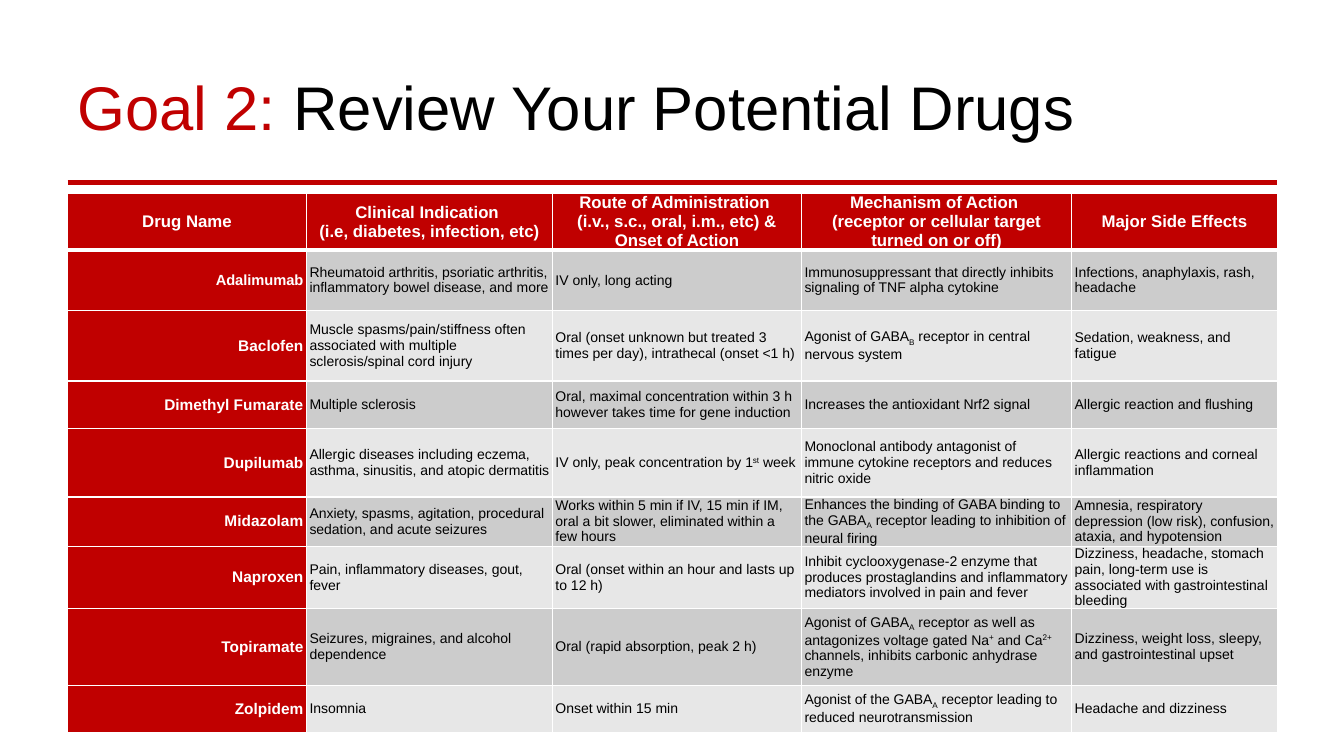
"""Build the slide that reviews potential drugs in a table."""
from lxml.etree import SubElement as Sub
from pptx import Presentation
from pptx.dml.color import RGBColor as Rgb
from pptx.enum.shapes import MSO_CONNECTOR as Conn
from pptx.enum.text import MSO_ANCHOR as Anchor, PP_ALIGN as Align
from pptx.oxml.ns import qn
from pptx.util import Inches as In, Pt

HUES = {"red": "C00000", "dark": "CCCCCC", "pale": "E7E7E7",
        "white": "FFFFFF", "black": "000000"}
TITLE = [("Goal 2: ", "red"), ("Review Your Potential Drugs", "black")]
HEADS = [
    "Drug Name",
    "Clinical Indication \n(i.e, diabetes, infection, etc)",
    "Route of Administration \n(i.v., s.c., oral, i.m., etc) & Onset of Action",
    "Mechanism of Action \n(receptor or cellular target turned on or off)",
    "Major Side Effects",
]
DRUGS = [
    ("Adalimumab",
     "Rheumatoid arthritis, psoriatic arthritis, inflammatory bowel disease, and more",
     "IV only, long acting",
     "Immunosuppressant that directly inhibits signaling of TNF alpha cytokine",
     "Infections, anaphylaxis, rash, headache"),
    ("Baclofen",
     "Muscle spasms/pain/stiffness often associated with multiple sclerosis/spinal cord injury",
     "Oral (onset unknown but treated 3 times per day), intrathecal (onset <1 h)",
     "Agonist of GABA|_B| receptor in central nervous system",
     "Sedation, weakness, and fatigue"),
    ("Dimethyl Fumarate",
     "Multiple sclerosis",
     "Oral, maximal concentration within 3 h however takes time for gene induction",
     "Increases the antioxidant Nrf2 signal",
     "Allergic reaction and flushing"),
    ("Dupilumab",
     "Allergic diseases including eczema, asthma, sinusitis, and atopic dermatitis",
     "IV only, peak concentration by 1|^st| week",
     "Monoclonal antibody antagonist of immune cytokine receptors and reduces nitric oxide",
     "Allergic reactions and corneal inflammation"),
    ("Midazolam",
     "Anxiety, spasms, agitation, procedural sedation, and acute seizures",
     "Works within 5 min if IV, 15 min if IM, oral a bit slower, eliminated within a few hours",
     "Enhances the binding of GABA binding to the GABA|_A| receptor leading to inhibition of neural firing",
     "Amnesia, respiratory depression (low risk), confusion, ataxia, and hypotension"),
    ("Naproxen",
     "Pain, inflammatory diseases, gout, fever",
     "Oral (onset within an hour and lasts up to 12 h)",
     "Inhibit cyclooxygenase-2 enzyme that produces prostaglandins and inflammatory mediators involved in pain and fever",
     "Dizziness, headache, stomach pain, long-term use is associated with gastrointestinal bleeding"),
    ("Topiramate",
     "Seizures, migraines, and alcohol dependence",
     "Oral (rapid absorption, peak 2 h)",
     "Agonist of GABA|_A| receptor as well as antagonizes voltage gated Na|^+| and Ca|^2+| channels, inhibits carbonic anhydrase enzyme",
     "Dizziness, weight loss, sleepy, and gastrointestinal upset"),
    ("Zolpidem",
     "Insomnia",
     "Onset within 15 min",
     "Agonist of the GABA|_A| receptor leading to reduced neurotransmission",
     "Headache and dizziness"),
]
COLS = [2.37, 2.44, 2.47, 2.68, 2.04]
ROWS = [0.47, 0.6, 0.7, 0.47, 0.68, 0.35, 0.35, 0.76, 0.47]
WIDE, HIGH = 13.33, 7.5
SPAN = sum(COLS)
LEFT = round((WIDE - SPAN) / 2, 2)
SHIFT = {"_": "-25000", "^": "30000"}


def write(para, text, size=10, hue="black", bold=False, align=Align.LEFT):
    """Add text to a paragraph; odd parts between bars are raised or lowered."""
    para.alignment = align
    for i, part in enumerate(text.split("|")):
        run = para.add_run()
        run.text = part[1:] if i % 2 else part
        font = run.font
        font.name, font.size, font.bold = "Arial", Pt(size), bold
        font.color.rgb = Rgb.from_string(HUES[hue])
        if i % 2:
            run._r.get_or_add_rPr().set("baseline", SHIFT[part[0]])


def edge(cell, row):
    """Draw white borders, thick between the header and the body."""
    props = cell._tc.get_or_add_tcPr()
    for side in "LRTB":
        thick = (row, side) in ((0, "B"), (1, "T"))
        line = Sub(props, qn("a:ln" + side), w=str(Pt(3 if thick else 1)))
        Sub(Sub(line, qn("a:solidFill")), qn("a:srgbClr"), val=HUES["white"])


def look(row, col):
    """Give the fill and the text format of a cell."""
    if row == 0:
        return "red", dict(size=12, hue="white", bold=True, align=Align.CENTER)
    if col == 0:
        size = 10.5 if row == 1 else 11
        return "red", dict(size=size, hue="white", bold=True, align=Align.RIGHT)
    return ("dark" if row % 2 else "pale"), {}


def fill_cell(cell, text, row, col):
    """Format one cell and write its lines."""
    fill, form = look(row, col)
    edge(cell, row)
    cell.fill.solid()
    cell.fill.fore_color.rgb = Rgb.from_string(HUES[fill])
    cell.vertical_anchor = Anchor.MIDDLE
    cell.margin_left = cell.margin_right = In(0.03)
    cell.margin_top = cell.margin_bottom = 0
    frame = cell.text_frame
    for i, line in enumerate(text.split("\n")):
        write(frame.add_paragraph() if i else frame.paragraphs[0], line, **form)


def main():
    """Lay out the rule, the table and the title."""
    deck = Presentation()
    deck.slide_width, deck.slide_height = In(WIDE), In(HIGH)
    shapes = deck.slides.add_slide(deck.slide_layouts[6]).shapes

    rule = shapes.add_connector(Conn.STRAIGHT, In(LEFT), In(1.81),
                                In(LEFT + SPAN), In(1.81))
    rule.line.color.rgb = Rgb.from_string(HUES["red"])
    rule.line.width = Pt(3)
    Sub(rule._element.spPr, qn("a:effectLst"))

    grid = shapes.add_table(len(ROWS), len(COLS), In(LEFT), In(1.92),
                            In(SPAN), In(sum(ROWS))).table
    grid.first_row = grid.horz_banding = False
    for col, width in zip(grid.columns, COLS):
        col.width = In(width)
    for row, height in zip(grid.rows, ROWS):
        row.height = In(height)
    for r, line in enumerate([HEADS, *DRUGS]):
        for c, text in enumerate(line):
            fill_cell(grid.cell(r, c), text, r, c)

    frame = shapes.add_textbox(In(LEFT), In(0.61), In(SPAN), In(0.88)).text_frame
    frame.word_wrap = True
    frame.vertical_anchor = Anchor.MIDDLE
    for text, hue in TITLE:
        write(frame.paragraphs[0], text, size=44, hue=hue)

    deck.save("out.pptx")


if __name__ == "__main__":
    main()
